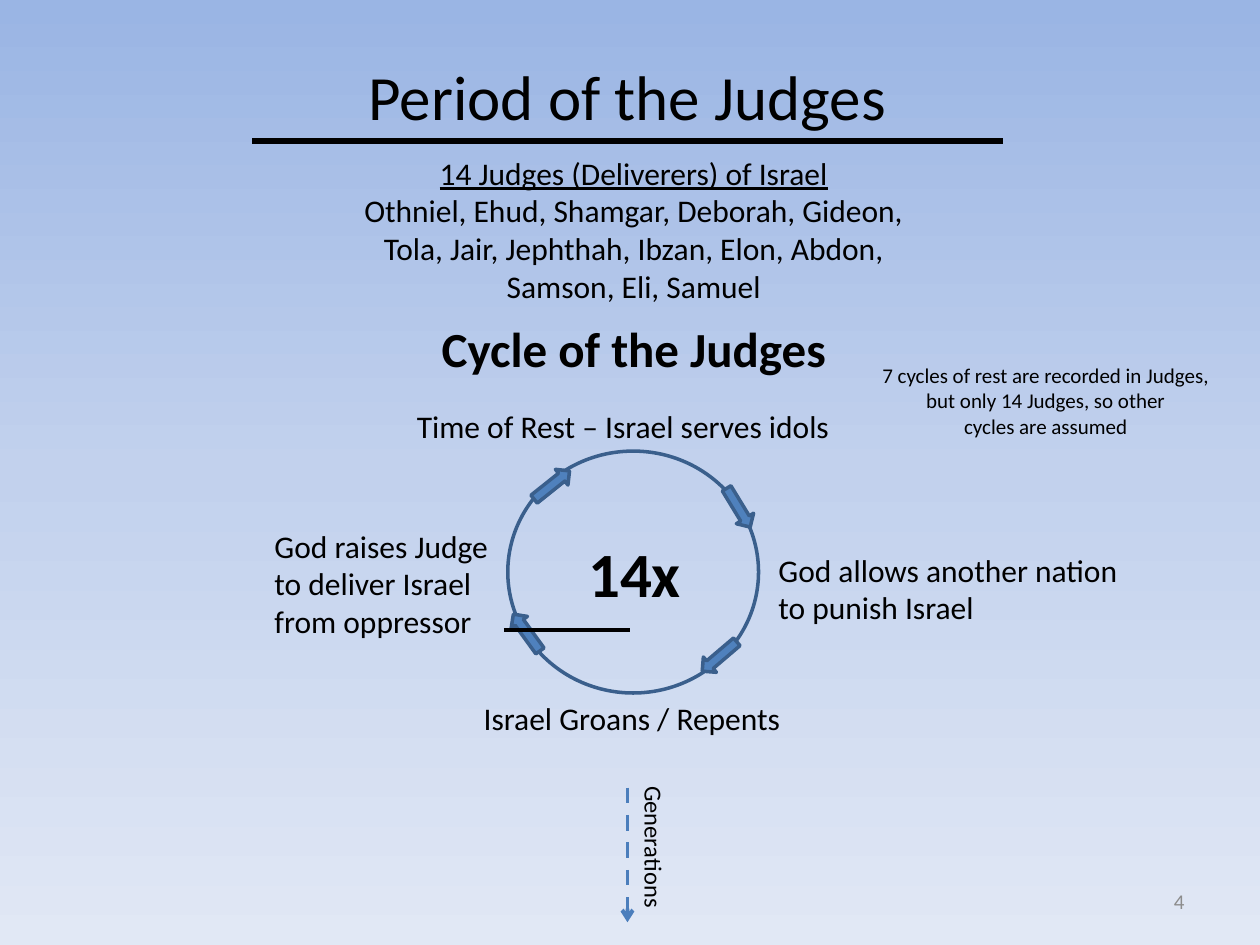
"""Build the slide on the period and cycle of the Judges."""
from copy import deepcopy
from pptx import Presentation
from pptx.dml.color import RGBColor
from pptx.enum.dml import MSO_LINE as Dash
from pptx.enum.shapes import MSO_CONNECTOR as Conn, MSO_SHAPE as Shape
from pptx.enum.text import MSO_ANCHOR as Anchor, MSO_AUTO_SIZE as Auto, PP_ALIGN as Align
from pptx.oxml.ns import qn
from pptx.util import Inches, Pt
from lxml.etree import SubElement

FONT = "Calibri"
HUES = {"ink": "000000", "blue": "4F81BD", "edge": "3A5F8C", "dash": "4B7EBC", "grey": "8C8C8C"}
SKY = [(0, "9AB5E4"), (0.5, "C2D1ED"), (1, "E1E8F5")]
LEFT, MID, RIGHT = Align.LEFT, Align.CENTER, Align.RIGHT

TEXTS = [
    ("Period of the Judges", (2, 0.41, 5.96, 0.71), 36, MID, {}),
    ("Cycle of the Judges", (2.78, 2.48, 4.5, 0.57), 28, MID, {"bold": True}),
    ("Generations", (4.6, 6.56, 1.18, 0.34), 14, LEFT, {"wrap": False, "turn": 90}),
    ("14 Judges (Deliverers) of Israel\nOthniel, Ehud, Shamgar, Deborah, Gideon, "
     "Tola, Jair, Jephthah, Ibzan, Elon, Abdon, Samson, Eli, Samuel",
     (2.53, 1.17, 5, 1.31), 18, MID, {"under": True}),
    ("Time of Rest – Israel serves idols", (3.21, 3.18, 3.64, 0.4), 18, LEFT, {"wrap": False}),
    ("God allows another nation\nto punish Israel", (6.08, 4.32, 2.93, 0.71), 18, LEFT,
     {"wrap": False}),
    ("Israel Groans / Repents", (3.74, 5.5, 2.58, 0.4), 18, LEFT, {"wrap": False}),
    ("God raises Judge\nto deliver Israel\nfrom oppressor", (2.08, 4.13, 1.92, 1.01), 18, LEFT,
     {"wrap": False}),
    ("14x", (4.57, 4.19, 1.33, 0.71), 36, LEFT, {"bold": True}),
    ("4", (7.17, 6.95, 2.33, 0.4), 12, RIGHT, {"hue": "grey", "grow": False}),
    ("7 cycles of rest are recorded in Judges,\nbut only 14 Judges, so other\n"
     "cycles are assumed", (6.87, 2.83, 2.86, 0.71), 12, MID, {"wrap": False}),
]
RING = (4.03, 3.58, 1.99, 1.92)
ARROWS = [(5.68, 3.95, 58.6), (5.53, 5.13, 139.6), (4, 4.94, 234.1), (4.2, 3.77, 321.4)]
ARROW = (0.36, 0.16)
TILDE = [(4.38, 4.61), (4.41, 4.57), (4.43, 4.54), (4.46, 4.54), (4.49, 4.54),
         (4.51, 4.62), (4.54, 4.62), (4.57, 4.62), (4.61, 4.56), (4.64, 4.53)]
STEPS = 12


def paint(item, hue):
    item.solid()
    item.fore_color.rgb = RGBColor.from_string(HUES[hue])


def stroke(line, hue, width):
    paint(line.fill, hue)
    line.width = Pt(width)


def add_sky(slide):
    fill = slide.background.fill
    fill.gradient()
    fill.gradient_angle = 270
    stops = slide.element.find(".//" + qn("a:gsLst"))
    stops.insert(1, deepcopy(stops[0]))
    for stop, (pos, hue) in zip(fill.gradient_stops, SKY):
        stop.position = pos
        stop.color.rgb = RGBColor.from_string(hue)


def add_text(slide, text, at, size, align, wrap=True, turn=0, bold=False, under=False,
             hue="ink", grow=True):
    box = slide.shapes.add_textbox(*map(Inches, at))
    box.rotation = turn
    frame = box.text_frame
    frame.text = text
    frame.word_wrap = wrap
    frame.auto_size = Auto.SHAPE_TO_FIT_TEXT if grow else Auto.NONE
    frame.vertical_anchor = Anchor.TOP if grow else Anchor.MIDDLE
    for i, para in enumerate(frame.paragraphs):
        para.alignment = align
        for run in para.runs:
            font = run.font
            font.name, font.size, font.bold = FONT, Pt(size), bold
            font.underline = under and i == 0
            paint(font.fill, hue)


def add_line(slide, start, end, hue, width):
    line = slide.shapes.add_connector(Conn.STRAIGHT, *map(Inches, start + end))
    stroke(line.line, hue, width)
    SubElement(line.element.spPr, qn("a:effectLst"))
    return line


def add_form(slide, kind, at, fill=None, turn=0):
    form = slide.shapes.add_shape(kind, *map(Inches, at))
    form.shadow.inherit = False
    form.rotation = turn
    if fill:
        paint(form.fill, fill)
    else:
        form.fill.background()
    stroke(form.line, "edge", 2)


def curve(knots):
    for i in range(0, len(knots) - 1, 3):
        for step in range(1, STEPS + 1):
            t = step / STEPS
            u = 1 - t
            parts = (u ** 3, 3 * u * u * t, 3 * u * t * t, t ** 3)
            yield tuple(sum(w * k[axis] for w, k in zip(parts, knots[i:i + 4]))
                        for axis in (0, 1))


def add_tilde(slide):
    pen = slide.shapes.build_freeform(*TILDE[0], scale=Inches(1))
    pen.add_line_segments(list(curve(TILDE)), close=False)
    wave = pen.convert_to_shape()
    wave.shadow.inherit = False
    wave.fill.background()
    stroke(wave.line, "ink", 2)


def main():
    deck = Presentation()
    deck.slide_width, deck.slide_height = Inches(10), Inches(7.5)
    slide = deck.slides.add_slide(deck.slide_layouts[6])
    add_sky(slide)
    add_line(slide, (2, 1.12), (7.96, 1.12), "ink", 3)
    time = add_line(slide, (4.98, 6.25), (4.98, 7.32), "dash", 2.25).line
    time.dash_style = Dash.DASH
    SubElement(time.fill._xPr, qn("a:tailEnd"), type="arrow")
    add_form(slide, Shape.OVAL, RING)
    for x, y, turn in ARROWS:
        add_form(slide, Shape.RIGHT_ARROW, (x, y) + ARROW, "blue", turn)
    for text, at, size, align, look in TEXTS:
        add_text(slide, text, at, size, align, **look)
    add_tilde(slide)
    deck.save("out.pptx")


if __name__ == "__main__":
    main()
